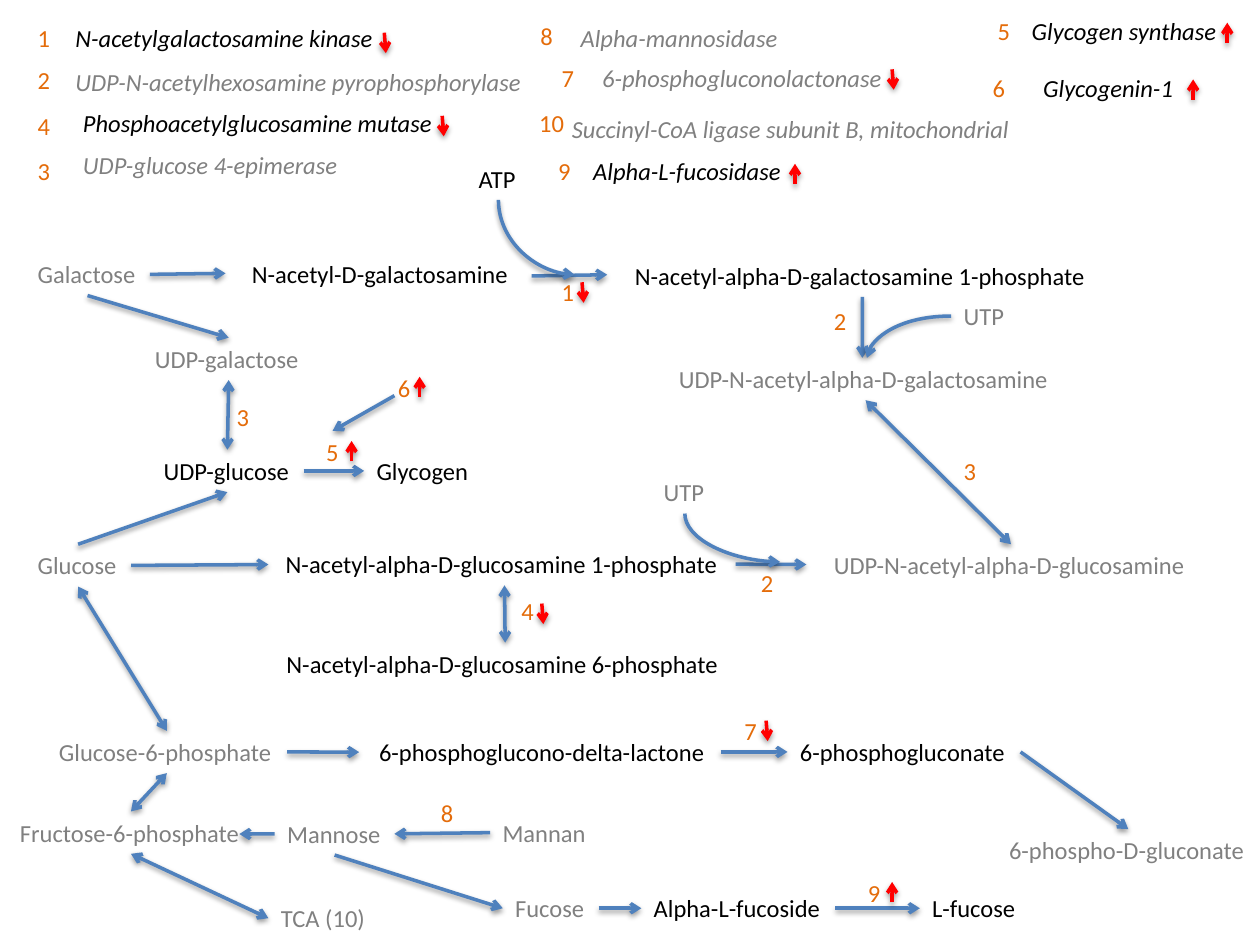
from lxml.etree import SubElement
from pptx import Presentation
from pptx.dml.color import RGBColor
from pptx.enum.shapes import MSO_CONNECTOR
from pptx.enum.text import MSO_ANCHOR, MSO_AUTO_SIZE
from pptx.oxml.ns import qn
from pptx.util import Pt

COLORS = {"found": "000000", "missing": "808080", "step": "E46C0A",
          "reaction": "4F81BD", "change": "FF0000", "shadow": "000000"}
TOP, LEFT, BOTTOM, RIGHT = range(4)
LINE_HEIGHT = 24.2
NUMBER_WIDTH = 21.6

COMPOUNDS = {
    "galactose": ("Galactose", 14.4, 144.7, 71.3, "missing"),
    "galnac": ("N-acetyl-D-galactosamine", 136.8, 144.7, 162.7, "found"),
    "atp": ("ATP", 266.4, 90, 36.7, "found"),
    "galnac 1p": ("N-acetyl-alpha-D-galactosamine 1-phosphate", 355.7, 145.4, 274.3, "found"),
    "udp galnac": ("UDP-N-acetyl-alpha-D-galactosamine", 380.9, 204.5, 227.5, "missing"),
    "upper utp": ("UTP", 543.6, 168.5, 38.2, "missing"),
    "udp galactose": ("UDP-galactose", 81.4, 193, 98.6, "missing"),
    "udp glucose": ("UDP-glucose", 86.4, 257, 87.1, "found"),
    "glycogen": ("Glycogen", 208.1, 257, 67.7, "found"),
    "glucose": ("Glucose", 14.4, 311, 60.5, "missing"),
    "glcnac 1p": ("N-acetyl-alpha-D-glucosamine 1-phosphate", 156.2, 310.3, 264.2, "found"),
    "lower utp": ("UTP", 372.2, 269.3, 38.2, "missing"),
    "udp glcnac": ("UDP-N-acetyl-alpha-D-glucosamine", 469.4, 311, 216.7, "missing"),
    "glcnac 6p": ("N-acetyl-alpha-D-glucosamine 6-phosphate", 156.6, 367.2, 264.2, "found"),
    "glucose 6p": ("Glucose-6-phosphate", 26.6, 417.6, 137.5, "missing"),
    "lactone": ("6-phosphoglucono-delta-lactone", 209.5, 417.6, 202.3, "found"),
    "gluconate": ("6-phosphogluconate", 450, 417.6, 133.2, "found"),
    "d gluconate": ("6-phospho-D-gluconate", 569.5, 473.8, 150.5, "missing"),
    "fructose 6p": ("Fructose-6-phosphate", 4.3, 463.7, 141.1, "missing"),
    "mannose": ("Mannose", 157, 464.4, 68.4, "missing"),
    "mannan": ("Mannan", 280.1, 463.7, 62.6, "missing"),
    "tca": ("TCA (10)", 153.4, 512.6, 63.4, "missing"),
    "fucose": ("Fucose", 287.3, 506.9, 54.7, "missing"),
    "fucoside": ("Alpha-L-fucoside", 366.5, 506.9, 110.9, "found"),
    "l fucose": ("L-fucose", 525.6, 506.9, 63.4, "found"),
}

STEPS = [
    ("1", 313.9, 154.8), ("2", 469.4, 171.4), ("2", 427.7, 321.1), ("3", 543.6, 257),
    ("3", 128.2, 226.1), ("4", 290.9, 337), ("5", 179.3, 246.2), ("6", 220.3, 209.5),
    ("7", 418.3, 405.4), ("8", 244.8, 452.2), ("9", 488.9, 498.2),
]

ENZYMES = [
    ("1", 14.4, 9.4, "N-acetylgalactosamine kinase", 36, 9.4, 189.4, "found"),
    ("2", 14.4, 33.8, "UDP-N-acetylhexosamine pyrophosphorylase", 36, 34.6, 275.8, "missing"),
    ("4", 14.4, 59.8, "Phosphoacetylglucosamine mutase", 40.3, 58.3, 219.6, "found"),
    ("3", 14.4, 85.7, "UDP-glucose 4-epimerase", 40.3, 82.1, 164.9, "missing"),
    ("8", 301.7, 8.6, "Alpha-mannosidase", 324.7, 9.4, 131, "missing"),
    ("7", 313.9, 32.4, "6-phosphogluconolactonase", 337, 32.4, 179.3, "missing"),
    ("10", 301, 58.3, "Succinyl-CoA ligase subunit B, mitochondrial", 319.7, 61.9, 270.7, "missing"),
    ("9", 311.8, 85.7, "Alpha-L-fucosidase", 331.9, 85.7, 126, "found"),
    ("5", 563, 5.8, "Glycogen synthase", 582.5, 5.8, 124.6, "found"),
    ("6", 560.2, 38.2, "Glycogenin-1", 589, 38.2, 92.9, "found"),
]

ONE_WAY = [
    (("galactose", RIGHT), (128.9, 156.2)),
    ((303.8, 157.7), (347, 157)),
    (("galnac 1p", BOTTOM), (492.8, 204.5)),
    (("glucose", RIGHT), (153.4, 322.6)),
    (("glcnac 1p", RIGHT), (460.8, 322.6)),
    (("galactose", BOTTOM), ("udp galactose", TOP)),
    (("glucose", TOP), ("udp glucose", BOTTOM)),
    (("udp glucose", RIGHT), ("glycogen", LEFT)),
    ((225.4, 226.1), ("5", TOP)),
    (("mannose", LEFT), (136.8, 476.6)),
    (("mannan", LEFT), ("mannose", RIGHT)),
    (("glucose 6p", RIGHT), (205.2, 429.8)),
    (("lactone", RIGHT), ("gluconate", LEFT)),
    (("gluconate", RIGHT), ("d gluconate", TOP)),
    (("mannose", BOTTOM), ("fucose", LEFT)),
    (("fucose", RIGHT), ("fucoside", LEFT)),
    (("fucoside", RIGHT), ("l fucose", LEFT)),
]
TWO_WAY = [
    (("glcnac 6p", TOP), ("glcnac 1p", BOTTOM)),
    (("udp galnac", BOTTOM), ("udp glcnac", TOP)),
    (("udp galactose", BOTTOM), ("udp glucose", TOP)),
    (("glucose 6p", TOP), ("glucose", BOTTOM)),
    (("glucose 6p", BOTTOM), ("fructose 6p", TOP)),
    (("fructose 6p", BOTTOM), ("tca", LEFT)),
]
COFACTORS = [
    ((284.8, 114.2), (328.3, 157), True),
    ((543.6, 180.6), (495.4, 204.5), False),
    ((391.3, 293.5), (445.7, 321.1), True),
]
INCREASES = [(454.3, 93.6), (509.8, 504), (681.8, 45.4),
             (701.3, 13), (200.9, 252), (239.8, 215.3)]
DECREASES = [(252.7, 66.2), (309.6, 344.9), (219.6, 18.7),
             (332.6, 161.3), (509.8, 39.6), (437.8, 411.8)]


def write_text(frame, text, font="Calibri", size=14, color="found", italic=False):
    para = frame.paragraphs[0]
    span = para.add_run()
    span.text = text
    span.font.name = font
    span.font.size = Pt(size)
    span.font.italic = italic
    span.font.color.rgb = RGBColor.from_string(COLORS[color])


class PathwayPage:
    line_width = 2

    def __init__(self, page):
        self.page = page
        self.boxes = {}

    def label(self, text, x, y, width, **style):
        box = self.page.shapes.add_textbox(Pt(x), Pt(y), Pt(width), Pt(LINE_HEIGHT))
        frame = box.text_frame
        frame.word_wrap = False
        frame.auto_size = MSO_AUTO_SIZE.SHAPE_TO_FIT_TEXT
        frame.vertical_anchor = MSO_ANCHOR.TOP
        write_text(frame, text, **style)
        return box

    def arrow(self, start, end, color="reaction", double=False, kind=MSO_CONNECTOR.STRAIGHT):
        points = [(0, 0) if isinstance(place[0], str) else place for place in (start, end)]
        arrow = self.page.shapes.add_connector(
            kind, *(Pt(value) for point in points for value in point))
        for place, join in ((start, arrow.begin_connect), (end, arrow.end_connect)):
            if isinstance(place[0], str):
                join(self.boxes[place[0]], place[1])
        arrow.line.width = Pt(self.line_width)
        arrow.line.color.rgb = RGBColor.from_string(COLORS[color])
        line = arrow.line._get_or_add_ln()
        for tag in ("a:headEnd", "a:tailEnd") if double else ("a:tailEnd",):
            SubElement(line, qn(tag), type="arrow")
        self.shade(arrow)
        return arrow

    def shade(self, arrow):
        effects = SubElement(arrow._element.spPr, qn("a:effectLst"))
        shadow = SubElement(effects, qn("a:outerShdw"), blurRad=str(Pt(3.1)),
                            dist=str(Pt(1.6)), dir="5400000", rotWithShape="0")
        tint = SubElement(shadow, qn("a:srgbClr"), val=COLORS["shadow"])
        SubElement(tint, qn("a:alpha"), val="38000")

    def curve(self, start, end, downward):
        if downward:
            middle_x, middle_y = (start[0] + end[0]) / 2, (start[1] + end[1]) / 2
            half_width, half_height = (end[0] - start[0]) / 2, (end[1] - start[1]) / 2
            start = middle_x + half_height, middle_y - half_width
            end = middle_x - half_height, middle_y + half_width
        curve = self.arrow(start, end, kind=MSO_CONNECTOR.CURVE)
        properties = curve._element.spPr
        properties.find(qn("a:prstGeom")).set("prst", "curvedConnector2")
        if downward:
            properties.find(qn("a:xfrm")).set("rot", str(270 * 60000))


def main():
    deck = Presentation()
    deck.slide_width, deck.slide_height = Pt(720), Pt(540)
    pathway = PathwayPage(deck.slides.add_slide(deck.slide_layouts[6]))

    for key, (name, x, y, width, color) in COMPOUNDS.items():
        pathway.boxes[key] = pathway.label(name, x, y, width, color=color)
    for number, x, y in STEPS:
        pathway.boxes[number] = pathway.label(number, x, y, NUMBER_WIDTH, color="step")
    for number, number_x, number_y, name, x, y, width, color in ENZYMES:
        number_width = NUMBER_WIDTH + 7.2 * (len(number) - 1)
        pathway.label(number, number_x, number_y, number_width, color="step")
        pathway.label(name, x, y, width, color=color, italic=True)

    for start, end in ONE_WAY:
        pathway.arrow(start, end)
    for start, end in TWO_WAY:
        pathway.arrow(start, end, double=True)
    for start, end, downward in COFACTORS:
        pathway.curve(start, end, downward)
    for x, y in INCREASES:
        pathway.arrow((x, y + 11.7), (x, y), color="change")
    for x, y in DECREASES:
        pathway.arrow((x, y), (x + 0.9, y + 11.7), color="change")

    deck.save("out.pptx")


if __name__ == "__main__":
    main()
